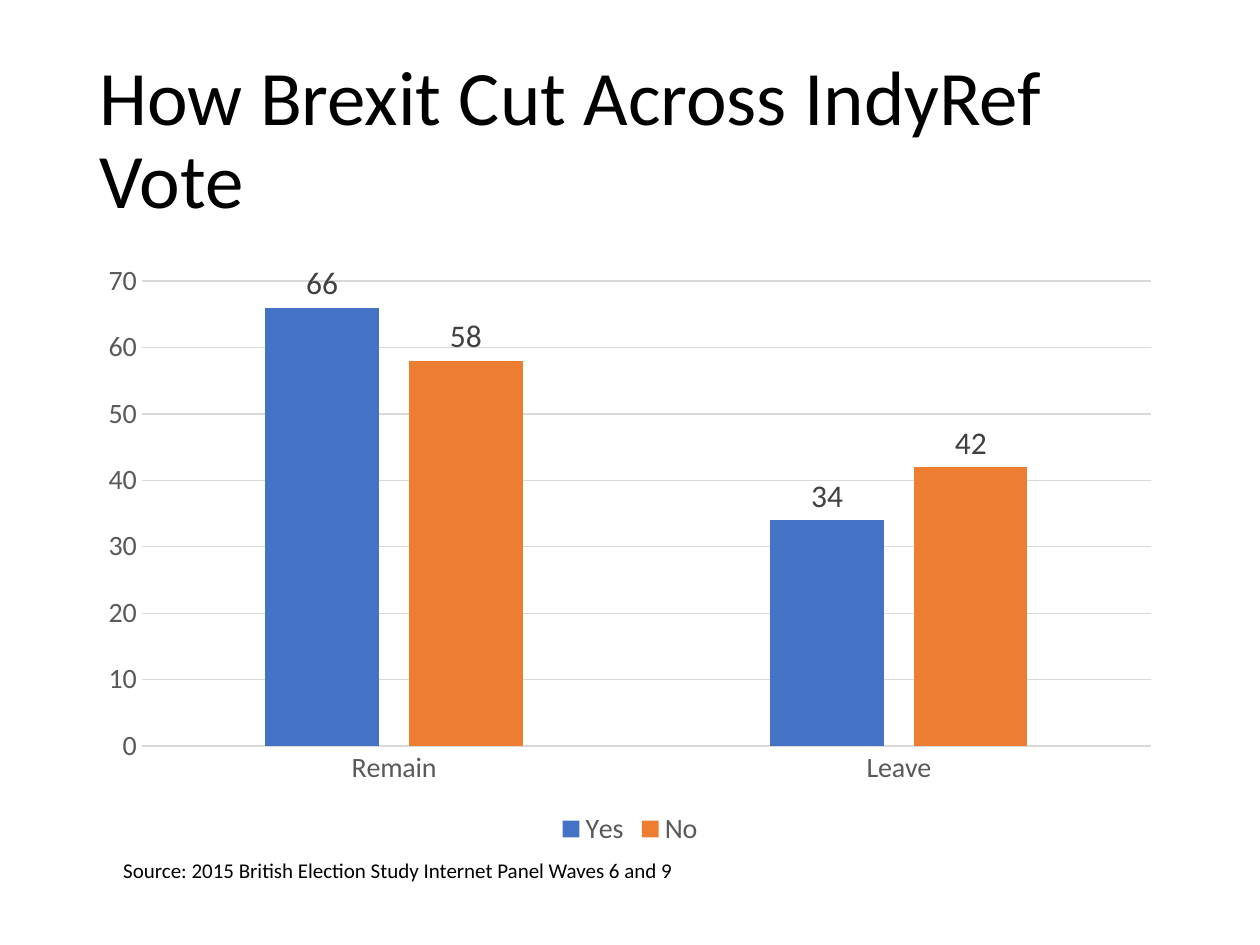
from dataclasses import dataclass

from pptx import Presentation
from pptx.chart.data import CategoryChartData
from pptx.dml.color import RGBColor
from pptx.enum.chart import XL_CHART_TYPE, XL_LABEL_POSITION, XL_LEGEND_POSITION, XL_TICK_MARK
from pptx.enum.text import MSO_ANCHOR
from pptx.util import Inches, Pt


@dataclass(frozen=True)
class Theme:
    """Colours, font and type sizes of the slide."""

    font: str = "Calibri"
    ink: str = "000000"
    axis_text: str = "595959"
    label_text: str = "404040"
    rule: str = "D9D9D9"
    series: tuple = ("4472C4", "ED7D31")
    title_size: int = 44
    label_size: int = 18
    axis_size: int = 16
    source_size: int = 12


THEME = Theme()
WIDTH, HEIGHT = Inches(10), Inches(7.5)
MARGIN = Inches(0.69)
CONTENT_WIDTH = WIDTH - 2 * MARGIN


def style_font(font, size, color):
    """Apply the theme font with a size and colour."""
    font.name = THEME.font
    font.size = Pt(size)
    font.color.rgb = RGBColor.from_string(color)


def style_line(line):
    """Give a chart line the thin rule look."""
    line.color.rgb = RGBColor.from_string(THEME.rule)
    line.width = Pt(0.75)


def add_text(slide, text, box, size, anchor=MSO_ANCHOR.TOP, spacing=None):
    """Add a wrapped one-paragraph text box."""
    frame = slide.shapes.add_textbox(*box).text_frame
    frame.word_wrap = True
    frame.vertical_anchor = anchor
    paragraph = frame.paragraphs[0]
    paragraph.line_spacing = spacing
    run = paragraph.add_run()
    run.text = text
    style_font(run.font, size, THEME.ink)


def style_axes(chart):
    """Format the category axis, value axis and gridlines."""
    for axis in (chart.category_axis, chart.value_axis):
        axis.major_tick_mark = axis.minor_tick_mark = XL_TICK_MARK.NONE
        style_font(axis.tick_labels.font, THEME.axis_size, THEME.axis_text)
    style_line(chart.category_axis.format.line)
    values = chart.value_axis
    values.minimum_scale, values.maximum_scale, values.major_unit = 0, 70, 10
    values.format.line.fill.background()
    style_line(values.major_gridlines.format.line)


def style_series(series, color):
    """Fill one series and show its values above the columns."""
    series.format.fill.solid()
    series.format.fill.fore_color.rgb = RGBColor.from_string(color)
    labels = series.data_labels
    labels.show_value = True
    labels.position = XL_LABEL_POSITION.OUTSIDE_END
    style_font(labels.font, THEME.label_size, THEME.label_text)


def add_column_chart(slide, categories, series_values, box):
    """Add the clustered column chart with its legend."""
    data = CategoryChartData(number_format="General")
    data.categories = categories
    for name, values in series_values.items():
        data.add_series(name, values)
    chart = slide.shapes.add_chart(XL_CHART_TYPE.COLUMN_CLUSTERED, *box, data).chart
    style_font(chart.font, 10, THEME.ink)
    chart.has_title = False
    chart.has_legend = True
    chart.legend.position = XL_LEGEND_POSITION.BOTTOM
    chart.legend.include_in_layout = False
    style_font(chart.legend.font, THEME.axis_size, THEME.axis_text)
    style_axes(chart)
    plot = chart.plots[0]
    plot.vary_by_categories = False
    plot.gap_width, plot.overlap = 219, -27
    for series, color in zip(plot.series, THEME.series):
        style_series(series, color)


def main():
    """Build and save the slide."""
    presentation = Presentation()
    presentation.slide_width, presentation.slide_height = WIDTH, HEIGHT
    slide = presentation.slides.add_slide(presentation.slide_layouts[6])
    add_text(slide, "How Brexit Cut Across IndyRef Vote",
             (MARGIN, Inches(0.4), CONTENT_WIDTH, Inches(1.45)),
             THEME.title_size, MSO_ANCHOR.MIDDLE, 0.9)
    add_column_chart(slide, ("Remain", "Leave"), {"Yes": (66, 34), "No": (58, 42)},
                     (MARGIN, Inches(2), CONTENT_WIDTH, Inches(4.76)))
    add_text(slide, "Source: 2015 British Election Study Internet Panel Waves 6 and 9",
             (Inches(0.88), Inches(6.76), Inches(7.2), Inches(0.3)), THEME.source_size)
    presentation.save("out.pptx")


if __name__ == "__main__":
    main()
